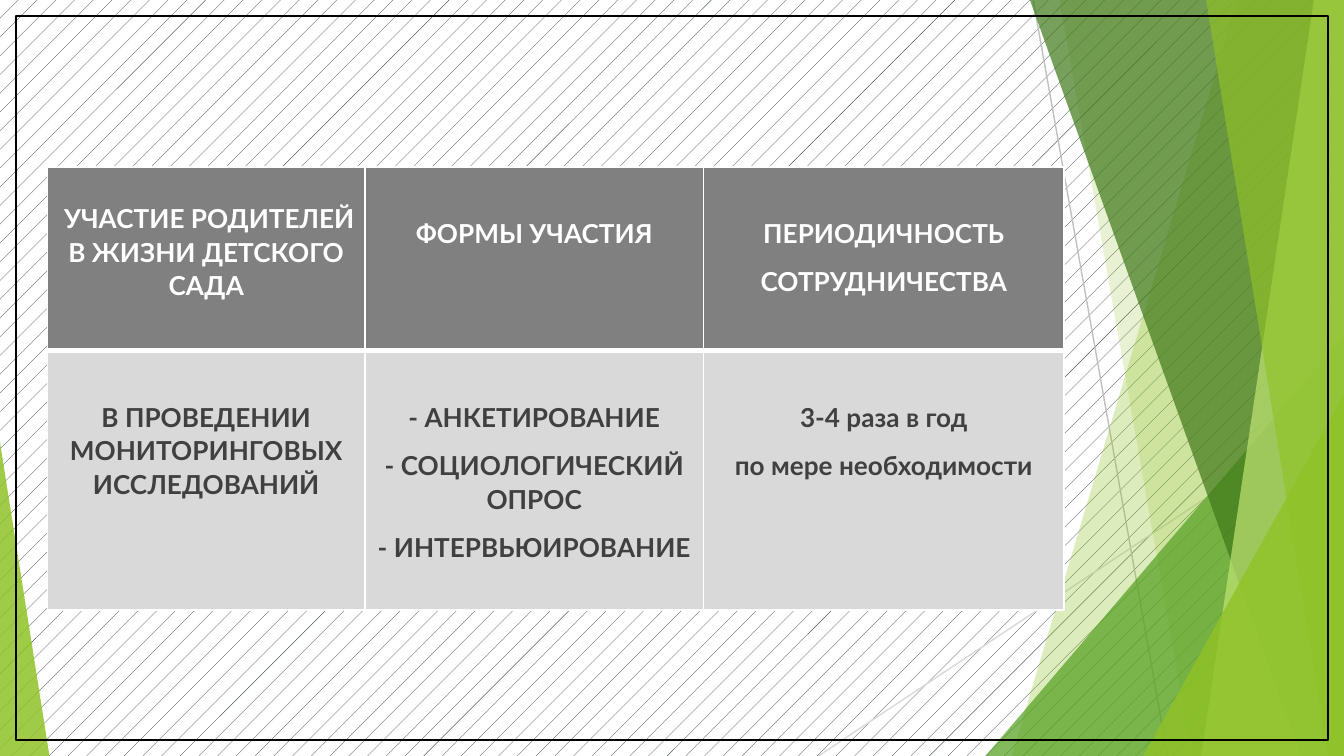
from lxml import etree
from pptx import Presentation
from pptx.dml.color import RGBColor
from pptx.enum import dml, shapes, text
from pptx.oxml import ns
from pptx.util import Pt

W, H = 720, 405
LIME, WHITE, DARK = "90C226", "FFFFFF", "404040"


def rgb(value):
    return RGBColor.from_string(value)


def sub(parent, tag, **attrs):
    return etree.SubElement(parent, ns.qn(tag), attrs)


class Deck:
    font = "Lato"
    size = 14

    def __init__(self):
        self.prs = Presentation()
        self.prs.slide_width, self.prs.slide_height = Pt(W), Pt(H)
        self.s = self.prs.slides.add_slide(self.prs.slide_layouts[6])

    def background(self, fore, back):
        fill = self.s.background.fill
        fill.patterned()
        fill.pattern = dml.MSO_PATTERN.PERCENT_5
        fill.fore_color.rgb, fill.back_color.rgb = rgb(fore), rgb(back)

    def line(self, x1, y1, x2, y2, color):
        c = self.s.shapes.add_connector(
            shapes.MSO_CONNECTOR.STRAIGHT, Pt(x1), Pt(y1), Pt(x2), Pt(y2))
        c.line.color.rgb, c.line.width = rgb(color), Pt(0.75)
        sub(c.element.spPr, "a:effectLst")

    def paint(self, sp, color, opacity):
        sp.shadow.inherit = False
        sp.fill.solid()
        sp.fill.fore_color.rgb = rgb(color)
        clr = sp.element.spPr.find(".//" + ns.qn("a:srgbClr"))
        sub(clr, "a:alpha", val=str(opacity * 1000))
        sp.line.fill.background()

    def band(self, top_x, bottom_x, color, opacity):
        """Full-height facet from a slanted left side to the slide's right edge."""
        top = -0.7
        fb = self.s.shapes.build_freeform(Pt(top_x), Pt(top))
        fb.add_line_segments([(Pt(x), Pt(y)) for x, y in
                              ((W, top), (W, H), (bottom_x, H))])
        self.paint(fb.convert_to_shape(), color, opacity)

    def triangle(self, x, y, w, apex, color, opacity):
        """Triangle that stands on the slide's bottom edge."""
        sp = self.s.shapes.add_shape(
            shapes.MSO_SHAPE.ISOSCELES_TRIANGLE, Pt(x), Pt(y), Pt(w), Pt(H - y))
        sp.adjustments[0] = apex
        self.paint(sp, color, opacity)

    def frame(self, x, y, w, h):
        sp = self.s.shapes.add_shape(
            shapes.MSO_SHAPE.RECTANGLE, Pt(x), Pt(y), Pt(w), Pt(h))
        sp.shadow.inherit = False
        sp.fill.background()
        sp.line.color.rgb, sp.line.width = rgb("000000"), Pt(1)

    def borders(self, cell, **widths):
        tcPr = cell._tc.get_or_add_tcPr()
        for i, (side, width) in enumerate(widths.items()):
            ln = etree.Element(ns.qn("a:ln" + side), w=str(Pt(width)))
            sub(sub(ln, "a:solidFill"), "a:srgbClr", val=WHITE)
            tcPr.insert(i, ln)

    def cell(self, cell, lines, top, fill, color):
        margins = dict(margin_left=Pt(5), margin_right=Pt(5),
                       margin_top=Pt(top), margin_bottom=0)
        for name, value in margins.items():
            setattr(cell, name, value)
        cell.fill.solid()
        cell.fill.fore_color.rgb = rgb(fill)
        tf = cell.text_frame
        tf.text = "\n".join(lines)
        for p in tf.paragraphs:
            for name, value in dict(alignment=text.PP_ALIGN.CENTER,
                                    line_spacing=1.07, space_after=Pt(8)).items():
                setattr(p, name, value)
            for r in p.runs:
                for name, value in dict(name=self.font, size=Pt(self.size),
                                        bold=True).items():
                    setattr(r.font, name, value)
                r.font.color.rgb = rgb(color)

    def table(self, x, y, widths, heights, rows):
        t = self.s.shapes.add_table(
            len(rows), len(widths), Pt(x), Pt(y),
            Pt(sum(widths)), Pt(sum(heights))).table
        for col, w in zip(t.columns, widths):
            col.width = Pt(w)
        for row, h in zip(t.rows, heights):
            row.height = Pt(h)
        for i, row in enumerate(rows):
            header = i == 0
            for j, (lines, top) in enumerate(row):
                c = t.cell(i, j)
                self.cell(c, lines, top, "808080" if header else "D9D9D9",
                          WHITE if header else DARK)
                self.borders(c, L=1, R=1, T=1 if header else 3,
                             B=3 if header else 1)


def main():
    d = Deck()
    d.background("212D32", WHITE)
    d.line(553.5, 0, 625.5, H, "BFBFBF")
    d.line(W, 217.5, 438.5, H, "D9D9D9")
    d.band(663, 542, LIME, 30)
    d.band(567.5, 638.5, LIME, 20)
    d.triangle(528, 180, 192, 1, "54A021", 72)
    d.band(551.5, 697, "3F7819", 70)
    d.band(704, 643.5, "C0E474", 70)
    d.band(646, 711.5, LIME, 65)
    d.triangle(612.5, 211.5, 107.5, 1, LIME, 80)
    d.triangle(0, 237, 26.5, 0, LIME, 85)
    d.frame(8.5, 8.5, 703, 388)
    d.table(25.5, 89.5, (170, 181.5, 193), (98.5, 139), [
        [([" УЧАСТИЕ РОДИТЕЛЕЙ\vВ ЖИЗНИ ДЕТСКОГО САДА"], 18),
         (["ФОРМЫ УЧАСТИЯ"], 26),
         (["ПЕРИОДИЧНОСТЬ", "СОТРУДНИЧЕСТВА"], 26)],
        [(["В ПРОВЕДЕНИИ МОНИТОРИНГОВЫХ ИССЛЕДОВАНИЙ"], 26),
         (["- АНКЕТИРОВАНИЕ", "- СОЦИОЛОГИЧЕСКИЙ ОПРОС",
           "- ИНТЕРВЬЮИРОВАНИЕ"], 26),
         (["3-4 раза в год", "по мере необходимости"], 26)],
    ])
    d.prs.save("out.pptx")


if __name__ == "__main__":
    main()
